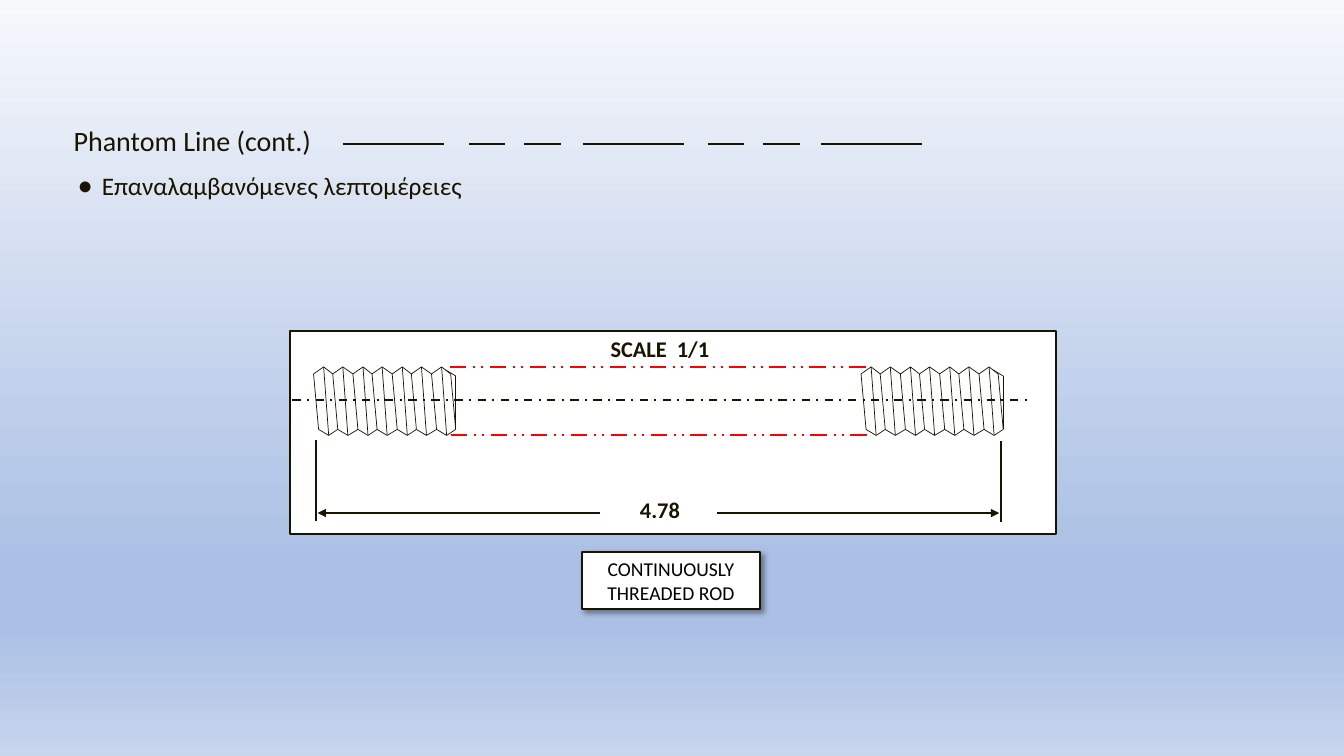
from lxml.etree import SubElement
from pptx import Presentation
from pptx.dml.color import RGBColor as RGB
from pptx.enum.dml import MSO_LINE as Dash
from pptx.enum.shapes import MSO_CONNECTOR as Link, MSO_SHAPE as Shape
from pptx.enum.text import MSO_ANCHOR as Anchor, MSO_AUTO_SIZE as Fit, PP_ALIGN as Align
from pptx.oxml.ns import qn
from pptx.util import Pt

PX = 9144  # EMU per px, 100 px to the inch
INK = RGB(0x1A, 0x13, 0x00)
RED = RGB(0xFF, 0x00, 0x00)
WHITE = RGB(0xFF, 0xFF, 0xFF)
BLACK = RGB(0x00, 0x00, 0x00)
SKY = [(0, "F6F8FC"), (74, "ABC0E4"), (83, "ABC0E4"), (100, "C7D5ED")]


def draw(host, x1, y1, x2, y2, width=1.5, color=INK, dash=None, arrow=False):
    line = host.add_connector(Link.STRAIGHT, x1 * PX, y1 * PX, x2 * PX, y2 * PX)
    line.line.width = Pt(width)
    line.line.color.rgb = color
    if dash:
        line.line.dash_style = dash
    if arrow:
        SubElement(line._element.spPr.find(qn("a:ln")), qn("a:tailEnd"), type="triangle")
    SubElement(line._element.spPr, qn("a:effectLst"))


def write(para, text, size, color=INK, align=Align.LEFT, bold=False):
    para.text = text
    para.alignment = align
    font = para.font
    font.name, font.size, font.bold = "Calibri", Pt(size), bold
    font.color.rgb = color


deck = Presentation()
deck.slide_width, deck.slide_height = 1333 * PX, 750 * PX
slide = deck.slides.add_slide(deck.slide_layouts[1])
shapes = slide.shapes

# Background gradient
fill = slide.background.fill
fill.gradient()
fill.gradient_angle = 270
stops = slide.element.find(".//" + qn("a:gsLst"))
for stop in list(stops):
    stops.remove(stop)
for pos, tone in SKY:
    stop = SubElement(stops, qn("a:gs"), pos=str(pos * 1000))
    SubElement(stop, qn("a:srgbClr"), val=tone)

# Title and bullet
title, body = shapes.title, slide.placeholders[1]
for holder, box in ((title, (63, 118, 1206, 44)), (body, (67, 167, 1211, 524))):
    holder.left, holder.top, holder.width, holder.height = [n * PX for n in box]
    holder.text_frame.auto_size = Fit.NONE
    holder.text_frame.vertical_anchor = Anchor.TOP
write(title.text_frame.paragraphs[0], "Phantom Line (cont.)", 20)

item = body.text_frame.paragraphs[0]
props = item._p.get_or_add_pPr()
props.set("marL", str(24 * PX))
props.set("indent", str(-24 * PX))
SubElement(props, qn("a:buChar"), char="●")
item.line_spacing = 0.9
item.space_before, item.space_after = Pt(0), Pt(6)
write(item, "Επαναλαμβανόμενες λεπτομέρειες", 18)

# Drawing panel
rod = shapes.add_group_shape().shapes
panel = rod.add_shape(Shape.RECTANGLE, 288 * PX, 328 * PX, 759 * PX, 202 * PX)
panel.shadow.inherit = False

# Dimension and centre lines
draw(rod, 313, 437, 313, 517)
draw(rod, 993, 438, 993, 518)
draw(rod, 595, 509, 315, 509, arrow=True)
draw(rod, 711, 509, 991, 509, arrow=True)
draw(rod, 290, 397, 1020, 397, dash=Dash.DASH_DOT)

# Phantom edges between the threaded ends
for x, y in ((446, 364), (447, 432)):
    draw(rod, x, y, x + 418, y, color=RED, dash=Dash.DASH_DOT_DOT)

# Threads: slanted roots and crests joined by zigzags
for left in (311, 854):
    for i in range(8):
        root = left + i * 39 // 2
        draw(rod, root, 371, root + 5, 426, 0.5)
        if i < 7:
            crest, after = root + 10, left + (i + 1) * 39 // 2
            draw(rod, crest, 364, crest + 5, 432, 0.5)
            for x in (root, after):
                draw(rod, crest, 364, x, 371, 0.5)
                draw(rod, crest + 5, 432, x + 5, 426, 0.5)
    draw(rod, left + 141, 426, left + 141, 373, 0.5)
    draw(rod, left + 141, 373, left + 131, 367, 0.5)

# Scale and length labels
frame = rod.add_textbox(579 * PX, 333 * PX, 151 * PX, 185 * PX).text_frame
frame.word_wrap = False
frame.vertical_anchor = Anchor.MIDDLE
scale = frame.paragraphs[0]
scale.space_after = Pt(96)
write(scale, "SCALE  1/1", 16, align=Align.CENTER, bold=True)
write(frame.add_paragraph(), "4.78", 16, align=Align.CENTER, bold=True)

# Caption with a soft shadow
label = shapes.add_shape(Shape.RECTANGLE, 577 * PX, 548 * PX, 177 * PX, 56 * PX)
label.shadow.inherit = False
shade = SubElement(label._element.spPr.find(qn("a:effectLst")), qn("a:outerShdw"),
                   blurRad=str(Pt(4)), dist=str(Pt(3)), dir="2700000",
                   algn="tl", rotWithShape="0")
tint = SubElement(shade, qn("a:srgbClr"), val="000000")
SubElement(tint, qn("a:alpha"), val="40000")
label.text_frame.word_wrap = True
label.text_frame.vertical_anchor = Anchor.TOP
write(label.text_frame.paragraphs[0], "CONTINUOUSLY THREADED ROD", 14, BLACK, Align.CENTER)

for box in (panel, label):
    box.fill.solid()
    box.fill.fore_color.rgb = WHITE
    box.line.color.rgb = INK
    box.line.width = Pt(1.5)

# Phantom line sample beside the title
for x, span in ((340, 100), (465, 36), (520, 36), (578, 100),
                (702, 36), (757, 36), (814, 100)):
    draw(shapes, x, 143, x + span, 143)

deck.save("out.pptx")
